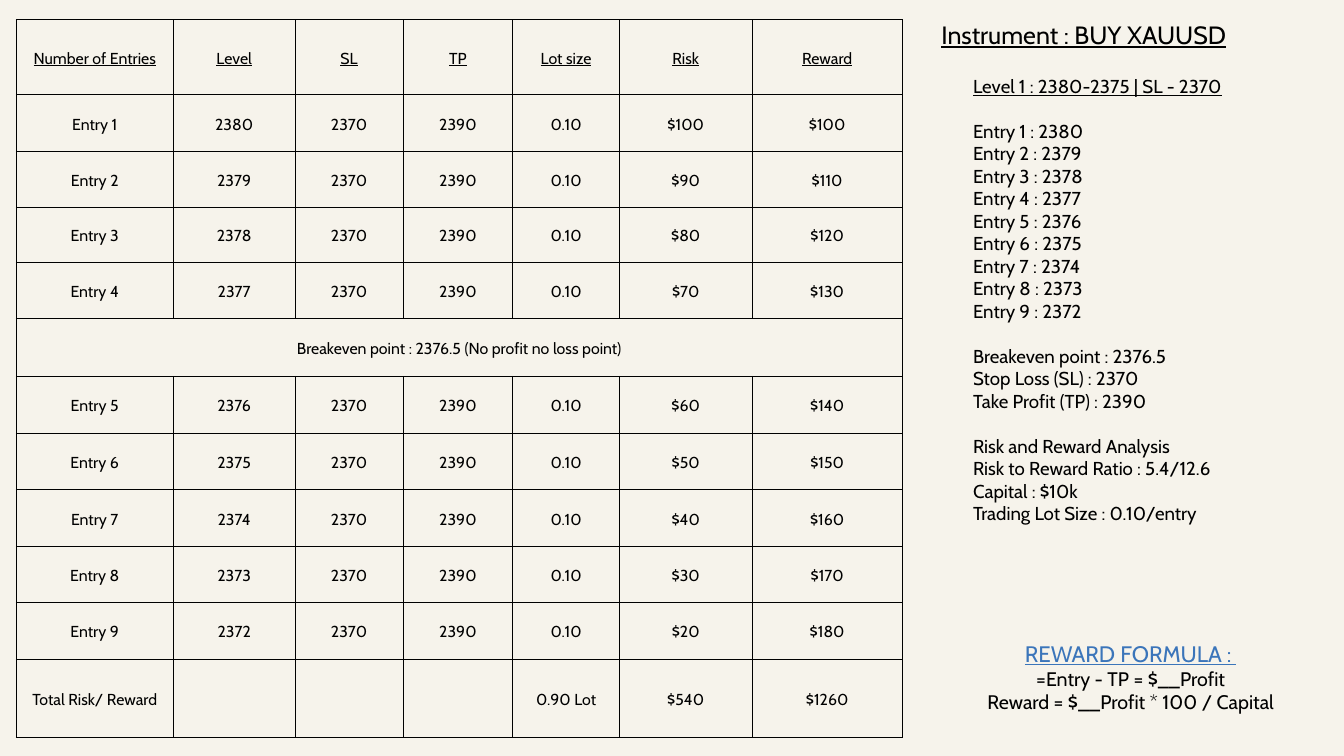
from dataclasses import dataclass

from lxml.etree import SubElement
from pptx import Presentation
from pptx.dml.color import RGBColor
from pptx.enum.text import MSO_ANCHOR, MSO_AUTO_SIZE, PP_ALIGN
from pptx.oxml.ns import qn
from pptx.util import Inches, Pt

BACKGROUND = RGBColor(0xF6, 0xF3, 0xEB)
BLACK = RGBColor(0x00, 0x00, 0x00)
BLUE = RGBColor(0x3B, 0x75, 0xBA)
FONT = "Cabin"

# Trading plan
FIRST_LEVEL = 2380
STOP_LOSS = 2370
TAKE_PROFIT = 2390
ENTRY_COUNT = 9
ENTRIES_BEFORE_BREAKEVEN = 4

# Table measures in inches
COLUMN_WIDTHS = [2.34, 1.81, 1.61, 1.63, 1.59, 1.97, 2.24]
ROW_HEIGHTS = [1.12, 0.84, 0.84, 0.81, 0.84, 0.86, 0.85, 0.84, 0.84, 0.84, 0.84, 1.16]
CELL_MARGIN = Inches(0.21)
BREAKEVEN_ROW = ENTRIES_BEFORE_BREAKEVEN + 1


@dataclass
class Line:
    text: str
    size: float
    spacing: float
    underline: bool = False
    color: RGBColor = BLACK
    alignment: PP_ALIGN = PP_ALIGN.LEFT
    space_before: float = 0


@dataclass
class TextBlock:
    left: float
    top: float
    width: float
    height: float
    lines: list[Line]


def write_line(paragraph, line: Line) -> None:
    paragraph.text = line.text
    paragraph.alignment = line.alignment
    paragraph.line_spacing = Pt(line.spacing)
    paragraph.space_before = Pt(line.space_before)
    font = paragraph.font
    font.name = FONT
    font.size = Pt(line.size)
    font.underline = line.underline
    font.color.rgb = line.color


def add_text_block(slide, block: TextBlock) -> None:
    shape = slide.shapes.add_textbox(
        Inches(block.left), Inches(block.top), Inches(block.width), Inches(block.height)
    )
    frame = shape.text_frame
    frame.word_wrap = True
    frame.auto_size = MSO_AUTO_SIZE.SHAPE_TO_FIT_TEXT
    frame.margin_left = frame.margin_right = frame.margin_top = frame.margin_bottom = 0
    for index, line in enumerate(block.lines):
        paragraph = frame.add_paragraph() if index else frame.paragraphs[0]
        write_line(paragraph, line)


def add_borders(cell) -> None:
    properties = cell._tc.get_or_add_tcPr()
    for side in ("a:lnL", "a:lnR", "a:lnT", "a:lnB"):
        border = SubElement(properties, qn(side), w=str(Pt(0.75)))
        fill = SubElement(border, qn("a:solidFill"))
        SubElement(fill, qn("a:srgbClr"), val=str(BLACK))


def format_cell(cell, text: str, underline: bool) -> None:
    cell.vertical_anchor = MSO_ANCHOR.MIDDLE
    cell.margin_left = cell.margin_right = CELL_MARGIN
    cell.margin_top = cell.margin_bottom = CELL_MARGIN
    add_borders(cell)
    cell.fill.background()
    write_line(
        cell.text_frame.paragraphs[0],
        Line(text, 17, 23.8, underline, alignment=PP_ALIGN.CENTER),
    )


def entry_row(number: int) -> list[str]:
    level = FIRST_LEVEL - number + 1
    risk = (level - STOP_LOSS) * 10
    reward = (TAKE_PROFIT - level) * 10
    return [f"Entry {number}", str(level), str(STOP_LOSS), str(TAKE_PROFIT),
            "0.10", f"${risk}", f"${reward}"]


def table_rows() -> list[list[str]]:
    rows = [["Number of Entries", "Level", "SL", "TP", "Lot size", "Risk", "Reward"]]
    rows += [entry_row(number) for number in range(1, ENTRY_COUNT + 1)]
    breakeven = "Breakeven point : 2376.5 (No profit no loss point)"
    rows.insert(BREAKEVEN_ROW, [breakeven] + [""] * (len(COLUMN_WIDTHS) - 1))
    rows.append(["Total Risk/ Reward", "", "", "", "0.90 Lot", "$540", "$1260"])
    return rows


def add_entry_table(slide) -> None:
    rows = table_rows()
    table = slide.shapes.add_table(
        len(rows), len(COLUMN_WIDTHS), Inches(0.24), Inches(0.29),
        Inches(sum(COLUMN_WIDTHS)), Inches(sum(ROW_HEIGHTS)),
    ).table
    table.first_row = False
    table.horz_banding = False
    for column, width in zip(table.columns, COLUMN_WIDTHS):
        column.width = Inches(width)
    for row, height in zip(table.rows, ROW_HEIGHTS):
        row.height = Inches(height)
    for row_index, texts in enumerate(rows):
        for column_index, text in enumerate(texts):
            format_cell(table.cell(row_index, column_index), text, row_index == 0)
    last_column = len(COLUMN_WIDTHS) - 1
    table.cell(BREAKEVEN_ROW, 0).merge(table.cell(BREAKEVEN_ROW, last_column))


def plan_lines() -> list[Line]:
    groups = [
        ["Level 1 : 2380-2375 | SL - 2370"],
        [f"Entry {number} : {FIRST_LEVEL - number + 1}" for number in range(1, ENTRY_COUNT + 1)],
        ["Breakeven point : 2376.5", f"Stop Loss (SL) : {STOP_LOSS}",
         f"Take Profit (TP) : {TAKE_PROFIT}"],
        ["Risk and Reward Analysis", "Risk to Reward Ratio : 5.4/12.6",
         "Capital : $10k", "Trading Lot Size : 0.10/entry"],
    ]
    spacing = 24.1
    lines = []
    for group_index, group in enumerate(groups):
        for index, text in enumerate(group):
            gap = spacing if group_index and index == 0 else 0
            lines.append(Line(text, 20, spacing, group_index == 0, space_before=gap))
    return lines


def main() -> None:
    presentation = Presentation()
    presentation.slide_width = Inches(20)
    presentation.slide_height = Inches(11.25)
    slide = presentation.slides.add_slide(presentation.slide_layouts[6])
    slide.background.fill.solid()
    slide.background.fill.fore_color.rgb = BACKGROUND

    # Instrument title, plan and reward formula
    center = PP_ALIGN.CENTER
    blocks = [
        TextBlock(14.01, 0.29, 5.64, 0.45, [Line("Instrument : BUY XAUUSD", 26.8, 32.1, True)]),
        TextBlock(14.48, 1.11, 5.08, 6.68, plan_lines()),
        TextBlock(14.48, 9.52, 4.69, 1.07, [
            Line("REWARD FORMULA : ", 24, 28.8, True, BLUE, center),
            Line("=Entry - TP = $__Profit", 21, 25.2, alignment=center),
            Line("Reward = $__Profit * 100 / Capital", 21, 25.2, alignment=center),
        ]),
    ]
    for block in blocks:
        add_text_block(slide, block)

    # Entries with risk and reward
    add_entry_table(slide)

    presentation.save("out.pptx")


if __name__ == "__main__":
    main()
